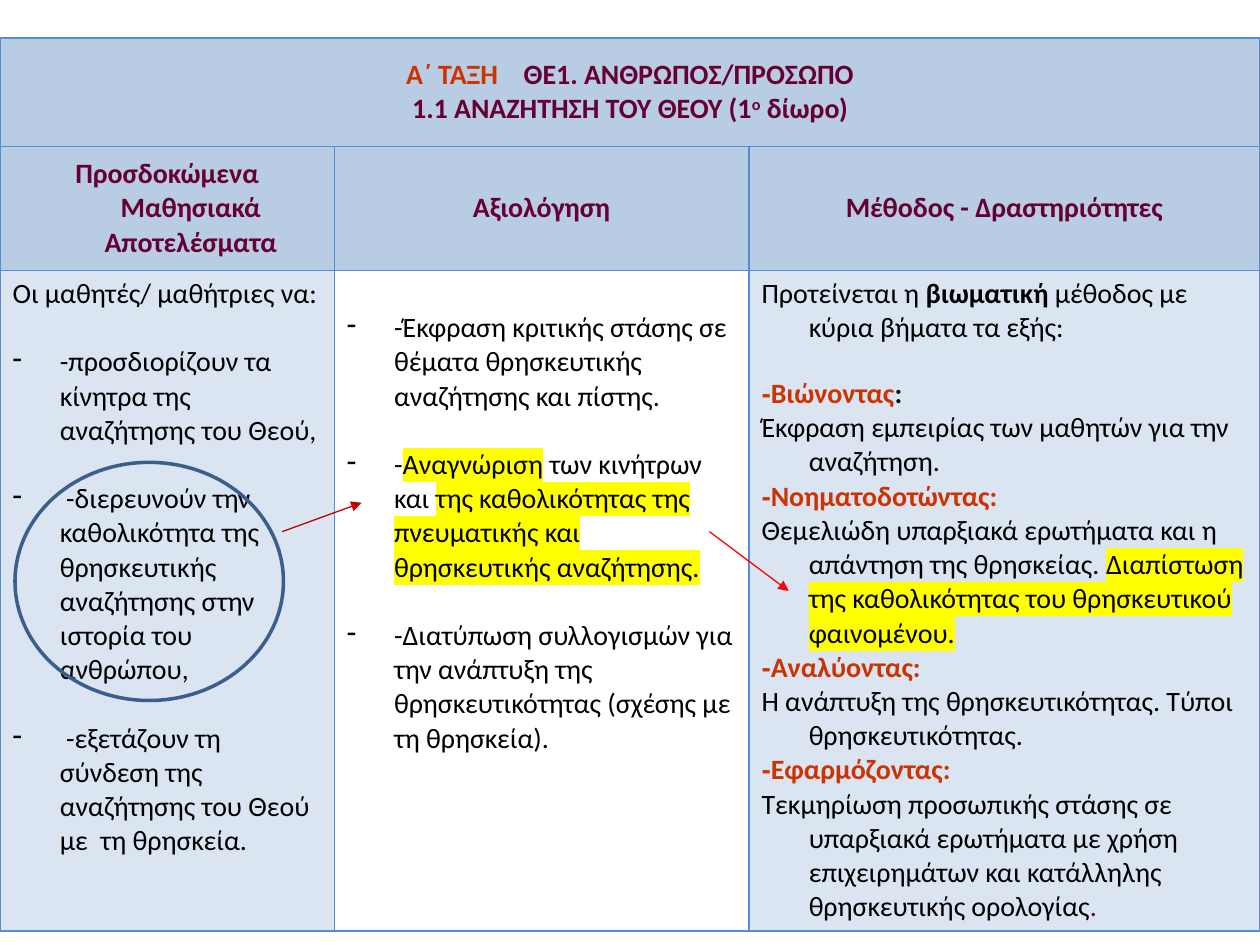
from pptx import Presentation
from pptx.dml.color import RGBColor
from pptx.enum.shapes import MSO_CONNECTOR as CONNECTOR, MSO_SHAPE as SHAPE
from pptx.enum.text import MSO_ANCHOR as ANCHOR, PP_ALIGN as ALIGN
from pptx.oxml import parse_xml
from pptx.oxml.ns import nsdecls
from pptx.util import Pt

rgb = RGBColor.from_string
NS = nsdecls("a")
LINE = 19.5  # height of one text line
HANG = Pt(27)

# Run styles: colour, bold, font, highlight
PLAIN = ("000000", False, "Calibri", None)
BOLD = ("000000", True, "Calibri", None)
MARKED = ("000000", False, "Calibri", "FFFF00")
PLUM = ("660033", True, "Calibri", None)
PLUM_STOP = ("660033", False, "Calibri", None)
RUST = ("CC3300", True, "Calibri", None)
RUST_DASH = ("CC3300", True, "Arial", None)


def add_run(paragraph, text, style):
    colour, bold, font, highlight = style
    run = paragraph.add_run()
    run.text = text
    run.font.size = Pt(16)
    run.font.bold = bold
    run.font.color.rgb = rgb(colour)
    if highlight:
        run._r.get_or_add_rPr().append(parse_xml(
            f'<a:highlight {NS}><a:srgbClr val="{highlight}"/></a:highlight>'))
    run.font.name = font
    return run


def fill_cell(cell, fill, paragraphs, heading=False):
    """Each paragraph is (space before, bulleted, [(text, style), ...])."""
    frame = cell.text_frame
    if heading:
        cell.vertical_anchor = ANCHOR.MIDDLE
    for i, (before, bulleted, runs) in enumerate(paragraphs):
        paragraph = frame.add_paragraph() if i else frame.paragraphs[0]
        paragraph.alignment = ALIGN.CENTER if heading else ALIGN.LEFT
        paragraph.space_before = Pt(before)
        props = paragraph._p.get_or_add_pPr()
        props.set("marL", str(HANG))
        props.set("indent", str(-HANG))
        bullet = '<a:buChar {} char="-"/>' if bulleted else "<a:buNone {}/>"
        props.append(parse_xml(bullet.format(NS)))
        for text, style in runs:
            add_run(paragraph, text, style)
    # Borders come before the fill in the cell properties
    for side in ("lnL", "lnR", "lnT", "lnB"):
        cell._tc.get_or_add_tcPr().append(parse_xml(
            f'<a:{side} {NS} w="{Pt(1)}"><a:solidFill><a:srgbClr val="548DD4"/>'
            f"</a:solidFill></a:{side}>"))
    if fill:
        cell.fill.solid()
        cell.fill.fore_color.rgb = rgb(fill)
    else:
        cell.fill.background()


prs = Presentation()
prs.slide_width, prs.slide_height = Pt(720), Pt(540)
slide = prs.slides.add_slide(prs.slide_layouts[6])

# Lesson plan grid
columns, rows = (191, 237, 292), (62, 71, 372)
plan = slide.shapes.add_table(3, 3, 0, Pt(21.6), Pt(sum(columns)), Pt(sum(rows))).table
plan.first_row = plan.horz_banding = False
for column, width in zip(plan.columns, columns):
    column.width = Pt(width)
for row, height in zip(plan.rows, rows):
    row.height = Pt(height)

# Lesson heading across the grid
lesson = plan.cell(0, 0)
lesson.merge(plan.cell(0, 2))
fill_cell(lesson, "B8CCE4", [
    (0, False, [("Α΄ ΤΑΞΗ", RUST), (" ", PLUM), ("ΘΕ1. ΑΝΘΡΩΠΟΣ/ΠΡΟΣΩΠΟ", PLUM)]),
    (0, False, [("1.1 ΑΝΑΖΗΤΗΣΗ ΤΟΥ ΘΕΟΥ (1", PLUM), ("ο", PLUM), (" δίωρο)", PLUM)]),
], heading=True)
class_line, topic_line = lesson.text_frame.paragraphs
class_line.runs[1]._r.get_or_add_rPr().set("spc", "1100")  # wide gap after the class
topic_line.runs[1]._r.get_or_add_rPr().set("baseline", "30000")

# Column headings
headings = ("Προσδοκώμενα Μαθησιακά Αποτελέσματα", "Αξιολόγηση", "Μέθοδος - Δραστηριότητες")
for i, heading in enumerate(headings):
    fill_cell(plan.cell(1, i), "B8CCE4", [(0, False, [(heading, PLUM)])], heading=True)

# Learning outcomes
outcomes = [
    "-προσδιορίζουν τα κίνητρα της αναζήτησης του Θεού,",
    " -διερευνούν την καθολικότητα της θρησκευτικής αναζήτησης στην ιστορία του ανθρώπου,",
    " -εξετάζουν τη σύνδεση της αναζήτησης του Θεού με  τη θρησκεία.",
]
fill_cell(plan.cell(2, 0), "DBE5F1",
          [(0, False, [("Οι μαθητές/ μαθήτριες να:", PLAIN)])]
          + [(LINE, True, [(outcome, PLAIN)]) for outcome in outcomes])

# Assessment, starting one line lower
assessment = plan.cell(2, 1)
assessment.margin_top = Pt(3.6 + LINE)
fill_cell(assessment, None, [
    (0, True, [("-Έκφραση κριτικής στάσης σε θέματα θρησκευτικής αναζήτησης και πίστης.", PLAIN)]),
    (LINE, True, [
        ("-", PLAIN), ("Αναγνώριση", MARKED), (" των κινήτρων και ", PLAIN),
        ("της καθολικότητας της πνευματικής και θρησκευτικής αναζήτησης.", MARKED)]),
    (LINE, True, [("-Διατύπωση συλλογισμών για την ανάπτυξη της θρησκευτικότητας "
                   "(σχέσης με τη θρησκεία).", PLAIN)]),
])

# Method: an introduction, then four steps
steps = [
    ([("Βιώνοντας", RUST), (":", BOLD)],
     [("Έκφραση εμπειρίας των μαθητών για την αναζήτηση.", PLAIN)]),
    ([("Νοηματοδοτώντας:", RUST)],
     [("Θεμελιώδη υπαρξιακά ερωτήματα και η απάντηση της θρησκείας. ", PLAIN),
      ("Διαπίστωση της καθολικότητας του θρησκευτικού φαινομένου.", MARKED)]),
    ([("Αναλύοντας:", RUST)],
     [("Η ανάπτυξη της θρησκευτικότητας. Τύποι θρησκευτικότητας.", PLAIN)]),
    ([("Εφαρμόζοντας:", RUST)],
     [("Τεκμηρίωση προσωπικής στάσης σε υπαρξιακά ερωτήματα με χρήση επιχειρημάτων "
       "και κατάλληλης θρησκευτικής ορολογίας", PLAIN), (".", PLUM_STOP)]),
]
method = [(0, False, [("Προτείνεται η ", PLAIN), ("βιωματική", BOLD),
                      (" μέθοδος με κύρια βήματα τα εξής:", PLAIN)])]
for i, (step, activity) in enumerate(steps):
    method.append((0 if i else 18, False, [("-", RUST_DASH)] + step))
    method.append((0, False, activity))
fill_cell(plan.cell(2, 2), "DBE5F1", method)

# Ring around the second outcome
ring = slide.shapes.add_shape(SHAPE.OVAL, Pt(8.6), Pt(264.2), Pt(153.4), Pt(136.1))
ring.shadow.inherit = False
ring.fill.background()
ring.line.color.rgb = rgb("3A5F8C")
ring.line.width = Pt(2)

# Arrows from outcome to assessment to method
for x1, y1, x2, y2, colour in ((161.3, 303.8, 206.6, 287.3, "C00000"),
                               (405.4, 303.8, 450.7, 337.7, "FF0000")):
    arrow = slide.shapes.add_connector(CONNECTOR.STRAIGHT, Pt(x1), Pt(y1), Pt(x2), Pt(y2))
    arrow.line.color.rgb = rgb(colour)
    arrow.line.width = Pt(0.75)
    arrow.line._get_or_add_ln().append(parse_xml(f'<a:tailEnd {NS} type="triangle"/>'))
    arrow._element.spPr.append(parse_xml(f"<a:effectLst {NS}/>"))

prs.save("out.pptx")
